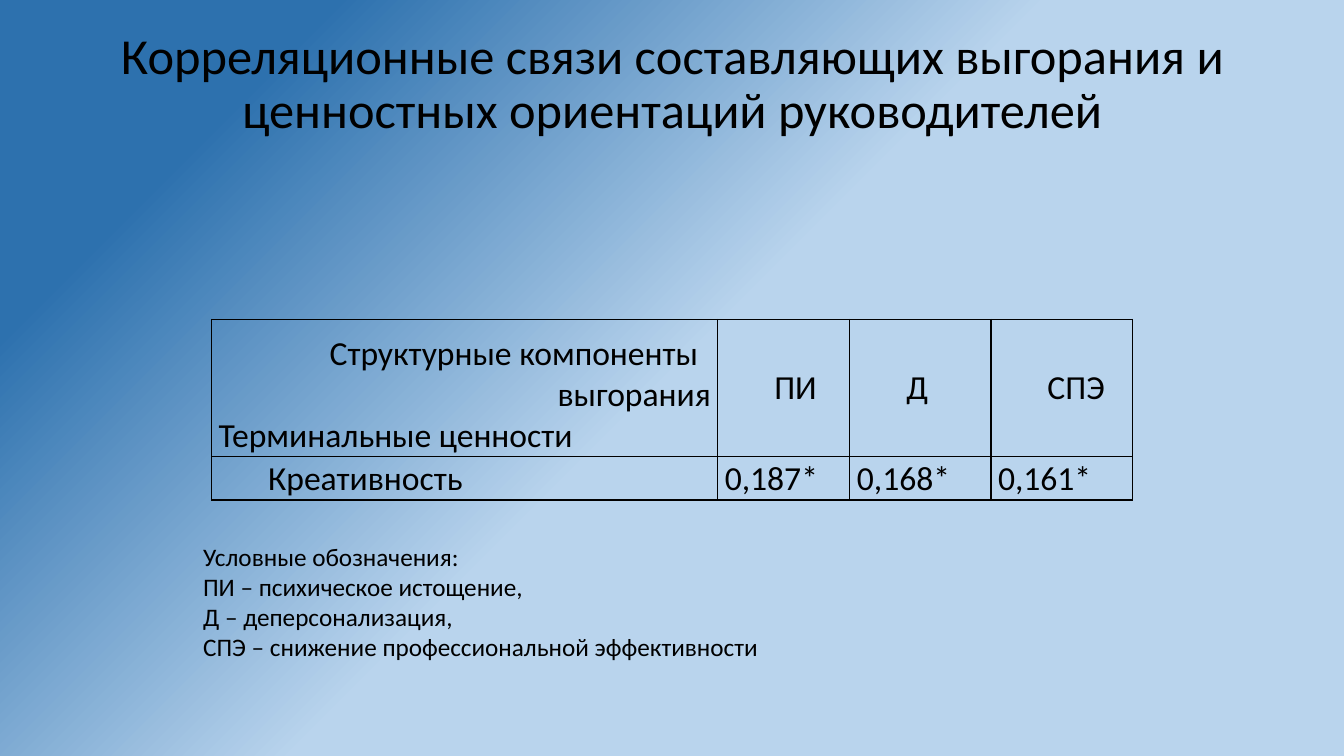
from lxml import etree
from pptx import Presentation
from pptx.dml.color import RGBColor
from pptx.enum.text import MSO_ANCHOR, PP_ALIGN
from pptx.oxml.ns import qn
from pptx.util import Emu, Inches, Pt

W, H = Inches(13.33), Inches(7.5)
BLACK = RGBColor(0x00, 0x00, 0x00)
LIGHT = RGBColor(0xB9, 0xD4, 0xED)
DARK = RGBColor(0x2D, 0x71, 0xAE)
FONT = "Calibri"
MIDDLE, BOTTOM = MSO_ANCHOR.MIDDLE, MSO_ANCHOR.BOTTOM
CENTER, RIGHT, JUSTIFY = PP_ALIGN.CENTER, PP_ALIGN.RIGHT, PP_ALIGN.JUSTIFY
INDENT = 0.49

TITLE = "Корреляционные связи составляющих выгорания и ценностных ориентаций руководителей"
LEGEND = [
    "Условные обозначения:",
    "ПИ – психическое истощение,",
    "Д – деперсонализация,",
    "СПЭ – снижение профессиональной эффективности",
]
CORNER = [
    ("Структурные компоненты", JUSTIFY, 1.1),
    ("выгорания", RIGHT, 0),
    ("Терминальные ценности", JUSTIFY, 0),
]
COMPONENTS = ["ПИ", "Д", "СПЭ"]
VALUE_NAME = "Креативность"
CORRELATIONS = ["0,187*", "0,168*", "0,161*"]
COLUMNS = [5.02, 1.31, 1.4, 1.4]
ROWS = [1.36, 0.43]


def share(x, y, w, h):
    return Emu(int(W * x)), Emu(int(H * y)), Emu(int(W * w)), Emu(int(H * h))


def paint_background(slide):
    fill = slide.background.fill
    fill.gradient()
    fill.gradient_angle = 135
    for stop, position, color in zip(fill.gradient_stops, (0.5, 0.84), (LIGHT, DARK)):
        stop.position = position
        stop.color.rgb = color


def write(tf, lines, size):
    for i, (text, align, indent) in enumerate(lines):
        p = tf.paragraphs[0] if i == 0 else tf.add_paragraph()
        p.alignment = align
        if indent:
            p._p.get_or_add_pPr().set("indent", str(Inches(indent)))
        r = p.add_run()
        r.text = text
        r.font.name = FONT
        r.font.size = Pt(size)
        r.font.color.rgb = BLACK


def add_text(slide, box, lines, size):
    tf = slide.shapes.add_textbox(*box).text_frame
    tf.word_wrap = True
    write(tf, lines, size)
    return tf


def add_title(slide):
    tf = add_text(slide, share(0.069, 0.053, 0.863, 0.193), [(TITLE, CENTER, 0)], 36)
    tf.vertical_anchor = MIDDLE
    tf.margin_bottom = Inches(0.6)
    tf.paragraphs[0].line_spacing = 0.9


def add_borders(cell):
    tcPr = cell._tc.get_or_add_tcPr()
    for side in ("lnL", "lnR", "lnT", "lnB"):
        ln = etree.SubElement(tcPr, qn(f"a:{side}"), w=str(Pt(1)))
        fill = etree.SubElement(ln, qn("a:solidFill"))
        etree.SubElement(fill, qn("a:srgbClr"), val=str(BLACK))


def fill_cell(cell, lines, anchor):
    add_borders(cell)
    cell.fill.background()
    cell.margin_left = cell.margin_right = Inches(0.07)
    cell.margin_top = cell.margin_bottom = 0
    cell.vertical_anchor = anchor
    write(cell.text_frame, lines, 24)


def add_correlations(slide):
    box = share(0.1575, 0.4227, 0.685, 0.2387)
    table = slide.shapes.add_table(len(ROWS), len(COLUMNS), *box).table
    table.first_row = table.horz_banding = False
    for column, width in zip(table.columns, COLUMNS):
        column.width = Inches(width)
    for row, height in zip(table.rows, ROWS):
        row.height = Inches(height)
    fill_cell(table.cell(0, 0), CORNER, BOTTOM)
    fill_cell(table.cell(1, 0), [(VALUE_NAME, JUSTIFY, INDENT)], BOTTOM)
    for col, (component, value) in enumerate(zip(COMPONENTS, CORRELATIONS), 1):
        fill_cell(table.cell(0, col), [(component, JUSTIFY, INDENT)], MIDDLE)
        fill_cell(table.cell(1, col), [(value, JUSTIFY, 0)], BOTTOM)


def main():
    prs = Presentation()
    prs.slide_width, prs.slide_height = W, H
    slide = prs.slides.add_slide(prs.slide_layouts[6])
    paint_background(slide)
    add_title(slide)
    add_correlations(slide)
    legend = [(text, JUSTIFY, INDENT) for text in LEGEND]
    add_text(slide, share(0.107, 0.709, 0.748, 0.175), legend, 18)
    prs.save("out.pptx")


if __name__ == "__main__":
    main()
